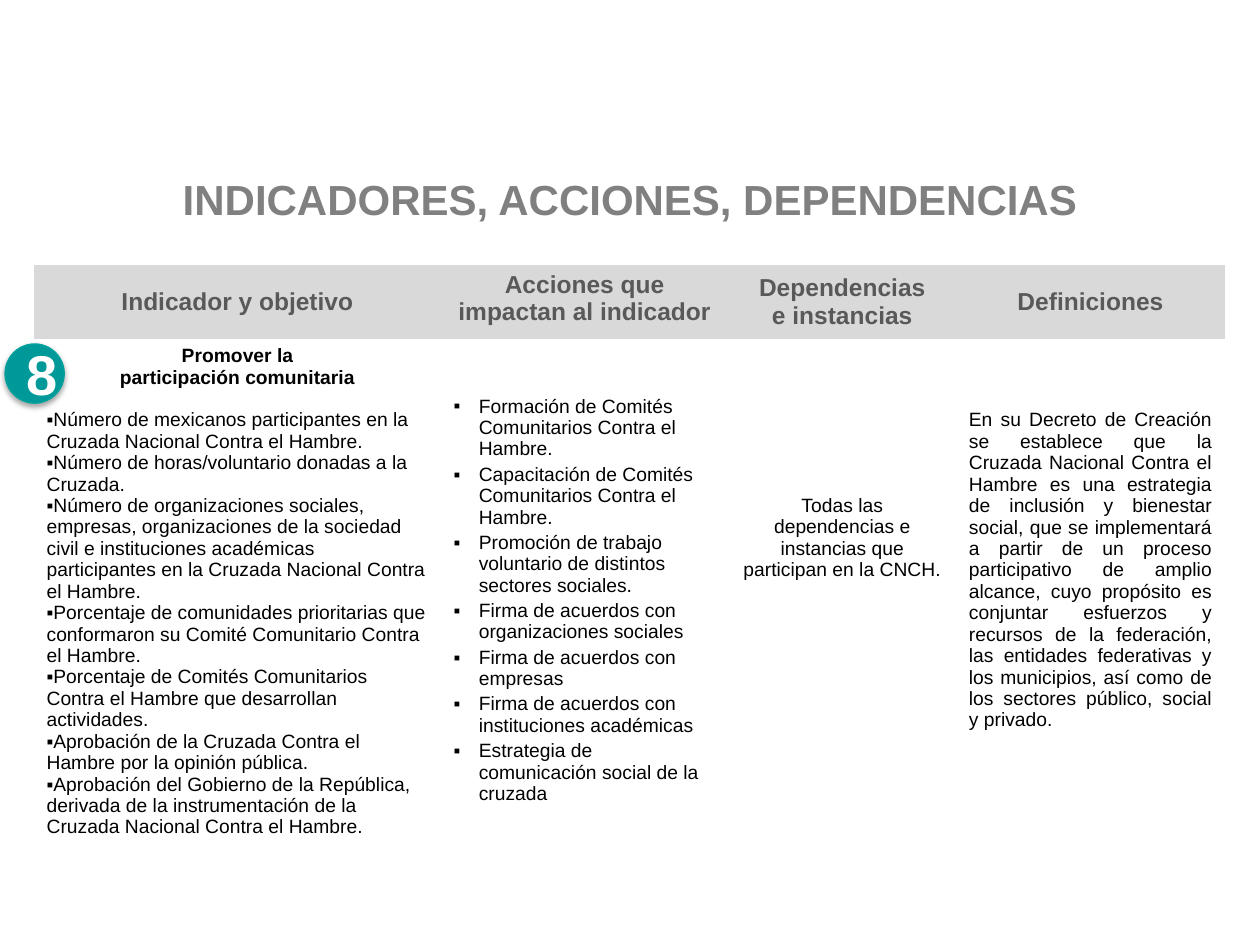
from lxml.etree import SubElement
from pptx import Presentation
from pptx.dml.color import RGBColor
from pptx.enum.shapes import MSO_SHAPE
from pptx.enum.text import MSO_ANCHOR, PP_ALIGN
from pptx.oxml.ns import qn
from pptx.util import Inches, Pt

TITLE_GRAY = RGBColor(0x80, 0x80, 0x80)
HEADER_GRAY = RGBColor(0x59, 0x59, 0x59)
HEADER_FILL = RGBColor(0xD9, 0xD9, 0xD9)
BLACK = RGBColor(0, 0, 0)
WHITE = RGBColor(0xFF, 0xFF, 0xFF)
TEAL = RGBColor(0x00, 0x99, 0x99)
TEAL_LINE = RGBColor(0x00, 0xA2, 0x9E)

TITLE = "INDICADORES, ACCIONES, DEPENDENCIAS"
NUMBER = "8"
HEADERS = [
    ["Indicador y objetivo"],
    ["Acciones que impactan al indicador"],
    ["Dependencias", "e instancias"],
    ["Definiciones"],
]
OBJECTIVE = ["Promover la", "participación comunitaria"]
INDICATORS = [
    "Número de mexicanos participantes en la Cruzada Nacional Contra el Hambre.",
    "Número de horas/voluntario donadas a la Cruzada.",
    "Número de organizaciones sociales, empresas, organizaciones de la sociedad civil e "
    "instituciones académicas participantes en la Cruzada Nacional Contra el Hambre.",
    "Porcentaje de comunidades prioritarias que conformaron su Comité Comunitario Contra el Hambre.",
    "Porcentaje de Comités Comunitarios Contra el Hambre que desarrollan actividades.",
    "Aprobación de la Cruzada Contra el Hambre por la opinión pública.",
    "Aprobación del Gobierno de la República, derivada de la instrumentación de la "
    "Cruzada Nacional Contra el Hambre.",
]
ACTIONS = [
    "Formación de Comités Comunitarios Contra el Hambre.",
    "Capacitación de Comités Comunitarios Contra el Hambre.",
    "Promoción de trabajo voluntario de distintos sectores sociales.",
    "Firma de acuerdos con organizaciones sociales",
    "Firma de acuerdos con empresas",
    "Firma de acuerdos con instituciones académicas",
    "Estrategia de comunicación social de la cruzada",
]
AGENCIES = ["Todas las dependencias e instancias que participan en la CNCH."]
DEFINITION = [
    "En su Decreto de Creación se establece que la Cruzada Nacional Contra el Hambre es una "
    "estrategia de inclusión y bienestar social, que se implementará a partir de un proceso "
    "participativo de amplio alcance, cuyo propósito es conjuntar esfuerzos y recursos de la "
    "federación, las entidades federativas y los municipios, así como de los sectores público, "
    "social y privado."
]

COLUMN_WIDTHS = [3.23, 2.28, 1.81, 2.13]
ROW_HEIGHTS = [0.59, 4.53]
BODY_TOP_MARGINS = [0.05, 0.45, 1.24, 0.56]
LINE_HEIGHT = 12.2
NO_TABLE_STYLE = "{2D5ABB26-0587-4C30-8999-92F81FD0307C}"


def write(frame, lines, size=11, color=BLACK, bold=False, align=PP_ALIGN.LEFT,
          bullet=False, indent=0, gap=0, first_gap=0):
    for position, line in enumerate(lines):
        started = bool(frame.paragraphs[0].runs)
        paragraph = frame.add_paragraph() if started else frame.paragraphs[0]
        paragraph.alignment = align
        paragraph.space_before = Pt(gap if position else first_gap)
        run = paragraph.add_run()
        run.text = line
        run.font.name = "Arial"
        run.font.size = Pt(size)
        run.font.bold = bold
        run.font.color.rgb = color
        if bullet:
            properties = paragraph._p.get_or_add_pPr()
            properties.set("marL", str(Inches(indent)))
            properties.set("indent", str(-Inches(indent)))
            SubElement(properties, qn("a:buFont"), typeface="Arial")
            SubElement(properties, qn("a:buChar"), char="▪")


def add_title(slide):
    title = slide.shapes.title
    title.left, title.top = 0, Inches(1.32)
    title.width, title.height = Inches(10), Inches(0.51)
    title.text_frame.vertical_anchor = MSO_ANCHOR.BOTTOM
    write(title.text_frame, [TITLE], size=24, color=TITLE_GRAY, bold=True,
          align=PP_ALIGN.CENTER)


def add_indicator_table(slide):
    frame = slide.shapes.add_table(
        len(ROW_HEIGHTS), len(COLUMN_WIDTHS), Inches(0.27), Inches(2.1),
        Inches(sum(COLUMN_WIDTHS)), Inches(sum(ROW_HEIGHTS)))
    table = frame.table
    table._tbl.tblPr.find(qn("a:tableStyleId")).text = NO_TABLE_STYLE
    table.horz_banding = False
    for column, width in zip(table.columns, COLUMN_WIDTHS):
        column.width = Inches(width)
    for row, height in zip(table.rows, ROW_HEIGHTS):
        row.height = Inches(height)

    for index, lines in enumerate(HEADERS):
        header = table.cell(0, index)
        header.fill.solid()
        header.fill.fore_color.rgb = HEADER_FILL
        header.vertical_anchor = MSO_ANCHOR.TOP if index == 1 else MSO_ANCHOR.MIDDLE
        write(header.text_frame, lines, size=14, color=HEADER_GRAY, bold=True,
              align=PP_ALIGN.CENTER)
        body = table.cell(1, index)
        body.fill.background()
        body.margin_top = Inches(BODY_TOP_MARGINS[index])

    indicators, actions, agencies, definition = [
        table.cell(1, index).text_frame for index in range(len(HEADERS))]
    write(indicators, OBJECTIVE, bold=True, align=PP_ALIGN.CENTER)
    write(indicators, INDICATORS, bullet=True, first_gap=LINE_HEIGHT)
    write(actions, ACTIONS, bullet=True, indent=0.2, gap=2.2)
    write(agencies, AGENCIES, align=PP_ALIGN.CENTER)
    write(definition, DEFINITION, align=PP_ALIGN.JUSTIFY)


def add_number_badge(slide):
    badge = slide.shapes.add_shape(
        MSO_SHAPE.OVAL, Inches(0.04), Inches(2.73), Inches(0.47), Inches(0.47))
    badge.fill.solid()
    badge.fill.fore_color.rgb = TEAL
    badge.line.color.rgb = TEAL_LINE
    badge.line.width = Pt(0.75)
    badge.shadow.inherit = False
    effects = badge._element.spPr.find(qn("a:effectLst"))
    shadow = SubElement(effects, qn("a:outerShdw"), blurRad=str(Pt(3.1)),
                        dist=str(Pt(1.8)), dir=str(90 * 60000), rotWithShape="0")
    shadow_color = SubElement(shadow, qn("a:srgbClr"), val=str(BLACK))
    SubElement(shadow_color, qn("a:alpha"), val="35000")
    badge.text_frame.vertical_anchor = MSO_ANCHOR.MIDDLE
    write(badge.text_frame, [NUMBER], size=32, color=WHITE, bold=True,
          align=PP_ALIGN.CENTER)


def main():
    presentation = Presentation()
    presentation.slide_width, presentation.slide_height = Inches(10), Inches(7.5)
    slide = presentation.slides.add_slide(presentation.slide_layouts[5])
    add_title(slide)
    add_indicator_table(slide)
    add_number_badge(slide)
    presentation.save("out.pptx")


if __name__ == "__main__":
    main()
